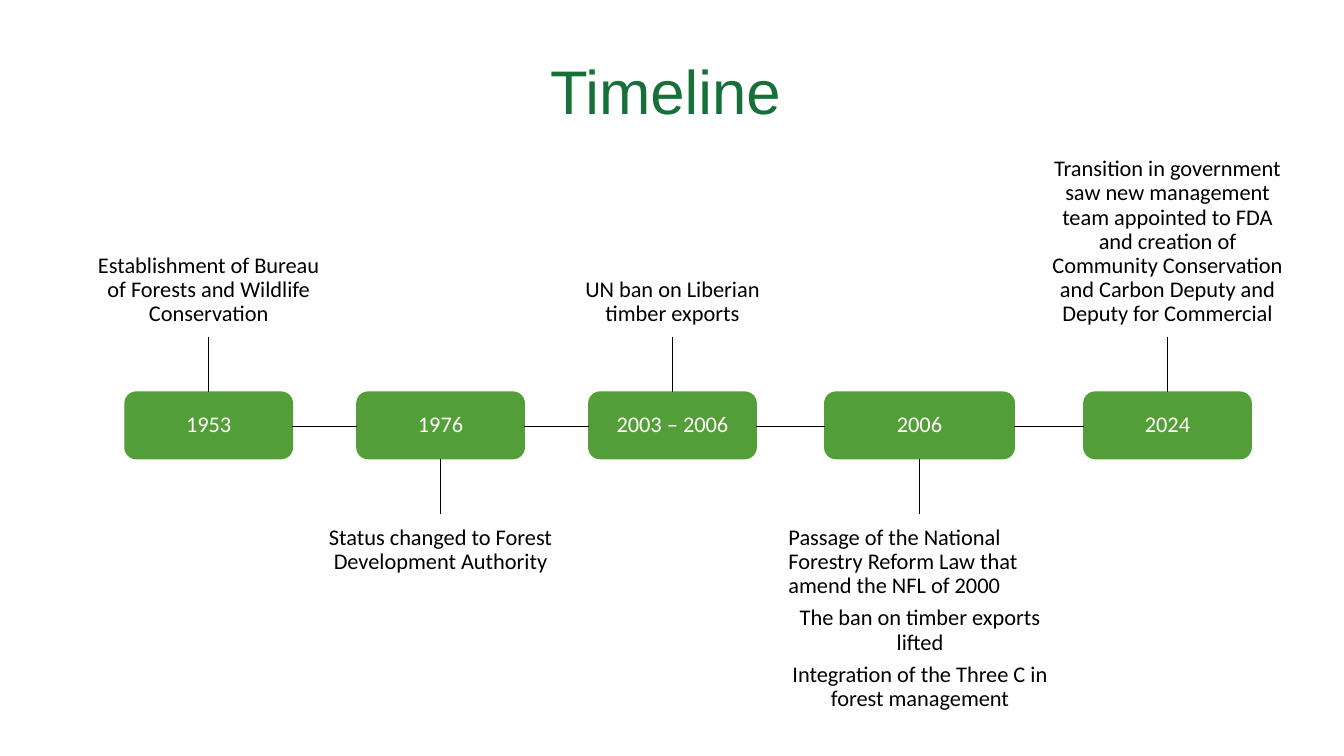
import pptx
import pptx.util
import pptx.dml.color
import pptx.enum.shapes
import pptx.enum.text
import pptx.oxml

PX = 9144  # 100 px to the inch
ALIGN = pptx.enum.text.PP_ALIGN
ANCHOR = pptx.enum.text.MSO_ANCHOR


def color(value):
    return pptx.dml.color.RGBColor.from_string(value)


def write(sp, lines, size, font, ink, anchor, margin=0):
    tf = sp.text_frame
    tf.word_wrap = True
    tf.vertical_anchor = anchor
    tf.margin_left = tf.margin_right = tf.margin_top = tf.margin_bottom = margin * PX
    tf.text = "\n".join(lines)
    for p in tf.paragraphs:
        p.alignment = ALIGN.CENTER
        p.line_spacing = 0.9
        p.space_after = pptx.util.Pt(size * 0.35)
        for r in p.runs:
            r.font.size = pptx.util.Pt(size)
            r.font.name = font
            r.font.color.rgb = color(ink)
    return tf


prs = pptx.Presentation()
prs.slide_width, prs.slide_height = 1333 * PX, 750 * PX
slide = prs.slides.add_slide(prs.slide_layouts[6])
shapes = slide.shapes

# Title
title = shapes.add_textbox(131 * PX, 21 * PX, 1058 * PX, 145 * PX)
write(title, ["Timeline"], 44, "Arial", "17703A", ANCHOR.MIDDLE, 5)

# Events: date, column width, paragraphs
events = [
    ("1953", 230, ["Establishment of Bureau of Forests and Wildlife Conservation"]),
    ("1976", 230, ["Status changed to Forest Development Authority"]),
    ("2003 – 2006", 230, ["UN ban on Liberian timber exports"]),
    ("2006", 261, ["Passage of the National Forestry Reform Law that amend the NFL of 2000",
                   "The ban on timber exports lifted",
                   "Integration of the Three C in forest management"]),
    ("2024", 230, ["Transition in government saw new management team appointed to FDA "
                   "and creation of Community Conservation and Carbon Deputy "
                   "and Deputy for Commercial"]),
]
BOX_TOP, BOX_H, STEM = 389, 66, 55
MID = BOX_TOP + BOX_H // 2 + 1

lines = []  # x1, y1, x2, y2, weight
x = 92
previous_right = None
for i, (date, width, notes) in enumerate(events):
    box_w = round(width * 0.72)
    box_x = x + (width - box_w) // 2
    above = i % 2 == 0

    # Date box
    box = shapes.add_shape(pptx.enum.shapes.MSO_SHAPE.ROUNDED_RECTANGLE,
                           box_x * PX, BOX_TOP * PX, box_w * PX, BOX_H * PX)
    box.name = "Date " + date
    box.adjustments[0] = 0.17
    box.shadow.inherit = False
    box.fill.solid()
    box.fill.fore_color.rgb = color("549E39")
    box.line.color.rgb = color("549E39")
    box.line.width = pptx.util.Pt(1)
    tf = write(box, [date], 16, "Calibri", "FFFFFF", ANCHOR.MIDDLE)
    tf.paragraphs[0].space_after = pptx.util.Pt(0)

    # Description, above and below the dates in turn
    note = shapes.add_textbox(x * PX, (147 if above else 522) * PX, width * PX, 177 * PX)
    tf = write(note, notes, 16, "Calibri", "000000", ANCHOR.BOTTOM if above else ANCHOR.TOP)
    if len(notes) > 1:
        tf.paragraphs[0].alignment = ALIGN.LEFT

    # Stem to the description and link to the previous date
    center = x + width // 2
    stem_top = BOX_TOP - STEM if above else BOX_TOP + BOX_H
    lines.append((center, stem_top, center, stem_top + STEM, 0.75))
    if previous_right is not None:
        lines.append((previous_right, MID, box_x, MID, 1))
    previous_right = box_x + box_w
    x += width

# Connecting lines
for x1, y1, x2, y2, weight in lines:
    cx = shapes.add_connector(pptx.enum.shapes.MSO_CONNECTOR.STRAIGHT,
                              x1 * PX, y1 * PX, x2 * PX, y2 * PX)
    cx.line.color.rgb = color("000000")
    cx.line.width = pptx.util.Pt(weight)
    cx._element.spPr.append(pptx.oxml.parse_xml(
        '<a:effectLst xmlns:a="http://schemas.openxmlformats.org/drawingml/2006/main"/>'))

prs.save("out.pptx")
